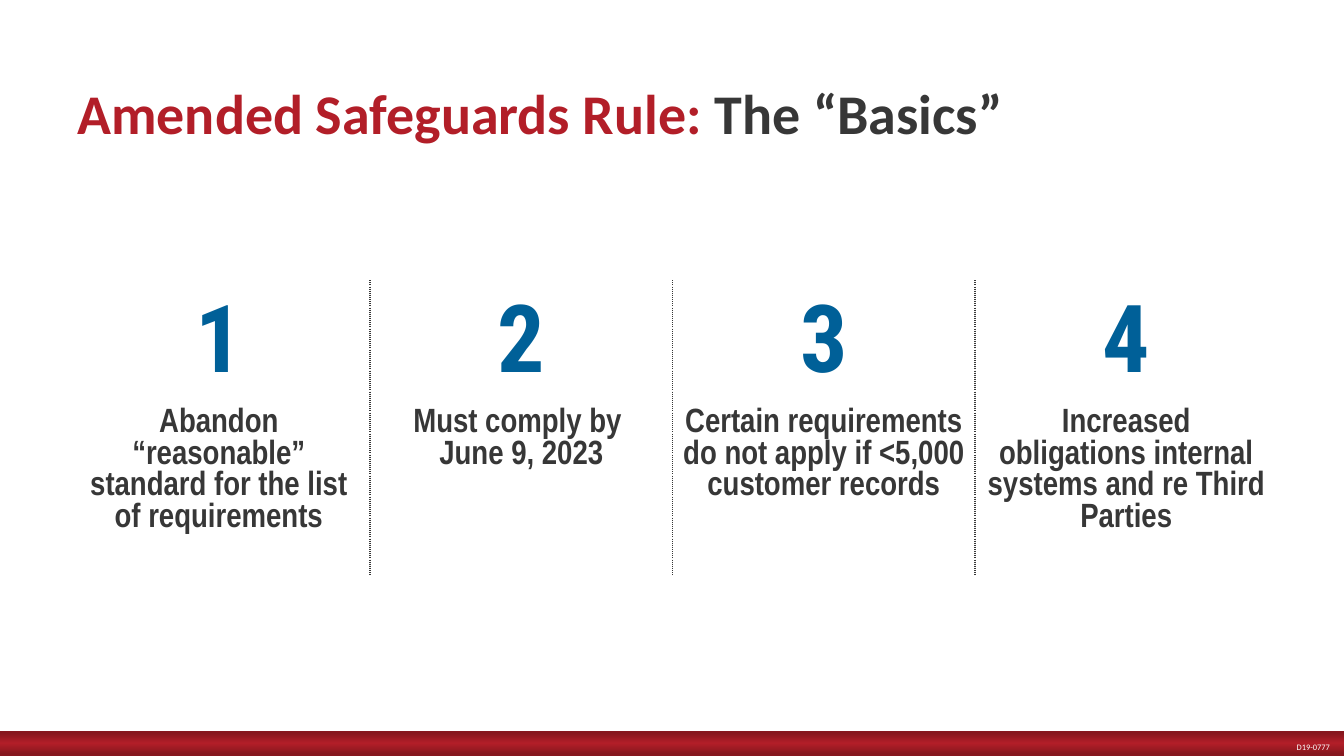
from lxml import etree
from pptx import Presentation, util as u
from pptx.dml.color import RGBColor
from pptx.enum import shapes, text
from pptx.oxml import parse_xml
from pptx.oxml.ns import nsdecls, qn

# Content
TITLE = [("Amended Safeguards Rule: ", "red"), ("The “Basics”", "dark")]
POINTS = [
    "Abandon “reasonable” standard for the list of requirements",
    "Must comply by \nJune 9, 2023",
    "Certain requirements do not apply if <5,000 customer records",
    "Increased obligations internal systems and re Third Parties",
]
DOCUMENT_CODE = "D19-0777"
COLOURS = {"red": "B21E28", "deep_red": "86171E", "dark": "373737",
           "blue": "006098", "white": "FFFFFF"}
BAR_STOPS = [(8, "deep_red"), (49, "red"), (92, "deep_red")]
NO_GRID_STYLE = "{2D5ABB26-0587-4C30-8999-92F81FD0307C}"

# Layout in inches
WIDTH, HEIGHT = 13.33, 7.5
MARGIN, CONTENT_WIDTH = 0.67, 12
BAR_HEIGHT = HEIGHT / 30
TABLE_TOP, ROW_HEIGHTS = 2.78, (1.21, 1.3)


def write(frame, runs, size, font, bold=False, align=text.PP_ALIGN.LEFT):
    """Fill a text frame with (wording, colour) runs; a newline breaks the line."""
    frame.word_wrap = True
    paragraph = frame.paragraphs[0]
    paragraph.alignment = align
    paragraph.font.size = u.Pt(size)
    for wording, colour in runs:
        for index, line in enumerate(wording.split("\n")):
            if index:
                paragraph.add_line_break()
            run = paragraph.add_run()
            run.text = line
            run.font.name, run.font.size, run.font.bold = font, u.Pt(size), bold
            run.font.color.rgb = RGBColor.from_string(COLOURS[colour])


def add_text_box(slide, left, top, width, height, inset_x=0.1, inset_y=0.05):
    frame = slide.shapes.add_textbox(*map(u.Inches, (left, top, width, height))).text_frame
    frame.margin_left = frame.margin_right = u.Inches(inset_x)
    frame.margin_top = frame.margin_bottom = u.Inches(inset_y)
    return frame


def add_dotted_sides(cell, sides):
    properties = cell._tc.get_or_add_tcPr()
    for position, side in enumerate(sides):
        properties.insert(position, parse_xml(
            f'<a:ln{side} {nsdecls("a")} w="12700"><a:solidFill>'
            f'<a:srgbClr val="{COLOURS["dark"]}"/></a:solidFill>'
            f'<a:prstDash val="sysDot"/></a:ln{side}>'))


def add_bottom_bar(slide):
    bar = slide.shapes.add_shape(
        shapes.MSO_SHAPE.RECTANGLE, 0, u.Inches(HEIGHT - BAR_HEIGHT),
        u.Inches(WIDTH), u.Inches(BAR_HEIGHT))
    bar.shadow.inherit = False
    bar.line.fill.background()
    bar.fill.gradient()
    bar.fill.gradient_angle = 270  # counter-clockwise: top to bottom
    stops = bar._element.spPr.find(".//" + qn("a:gsLst"))
    for stop in list(stops):
        stops.remove(stop)
    for share, colour in BAR_STOPS:
        stop = etree.SubElement(stops, qn("a:gs"), pos=str(share * 1000))
        etree.SubElement(stop, qn("a:srgbClr"), val=COLOURS[colour])


def add_points_table(slide):
    count = len(POINTS)
    frame = slide.shapes.add_table(
        2, count, u.Inches(MARGIN), u.Inches(TABLE_TOP),
        u.Inches(CONTENT_WIDTH), u.Inches(sum(ROW_HEIGHTS)))
    table = frame.table
    table.first_row = table.horz_banding = False
    table._tbl.tblPr.find(qn("a:tableStyleId")).text = NO_GRID_STYLE
    for row, height in zip(table.rows, ROW_HEIGHTS):
        row.height = u.Inches(height)
    for column, point in enumerate(POINTS):
        table.columns[column].width = u.Inches(CONTENT_WIDTH / count)
        sides = ("L" if column else "") + ("R" if column < count - 1 else "")
        entries = [(str(column + 1), "blue", 67, "Roboto Condensed"),
                   (point, "dark", 24, "Arial Narrow")]
        for row, (wording, colour, size, font) in enumerate(entries):
            cell = table.cell(row, column)
            cell.fill.solid()
            cell.fill.fore_color.rgb = RGBColor.from_string(COLOURS["white"])
            add_dotted_sides(cell, sides)
            write(cell.text_frame, [(wording, colour)], size, font, bold=True,
                  align=text.PP_ALIGN.CENTER)


def main():
    presentation = Presentation()
    presentation.slide_width = u.Inches(WIDTH)
    presentation.slide_height = u.Inches(HEIGHT)
    slide = presentation.slides.add_slide(presentation.slide_layouts[6])

    # Bottom bar with document code
    add_bottom_bar(slide)
    code = add_text_box(slide, 11.47, 7.36, 1.72, 0.1, inset_x=0, inset_y=0)
    write(code, [(DOCUMENT_CODE, "white")], 6, "Calibri", align=text.PP_ALIGN.RIGHT)

    # Title
    title = add_text_box(slide, MARGIN, 0.71, CONTENT_WIDTH, 0.8)
    title.vertical_anchor = text.MSO_ANCHOR.MIDDLE
    write(title, TITLE, 40, "Calibri", bold=True)

    # Numbered points
    add_points_table(slide)
    presentation.save("out.pptx")


if __name__ == "__main__":
    main()
